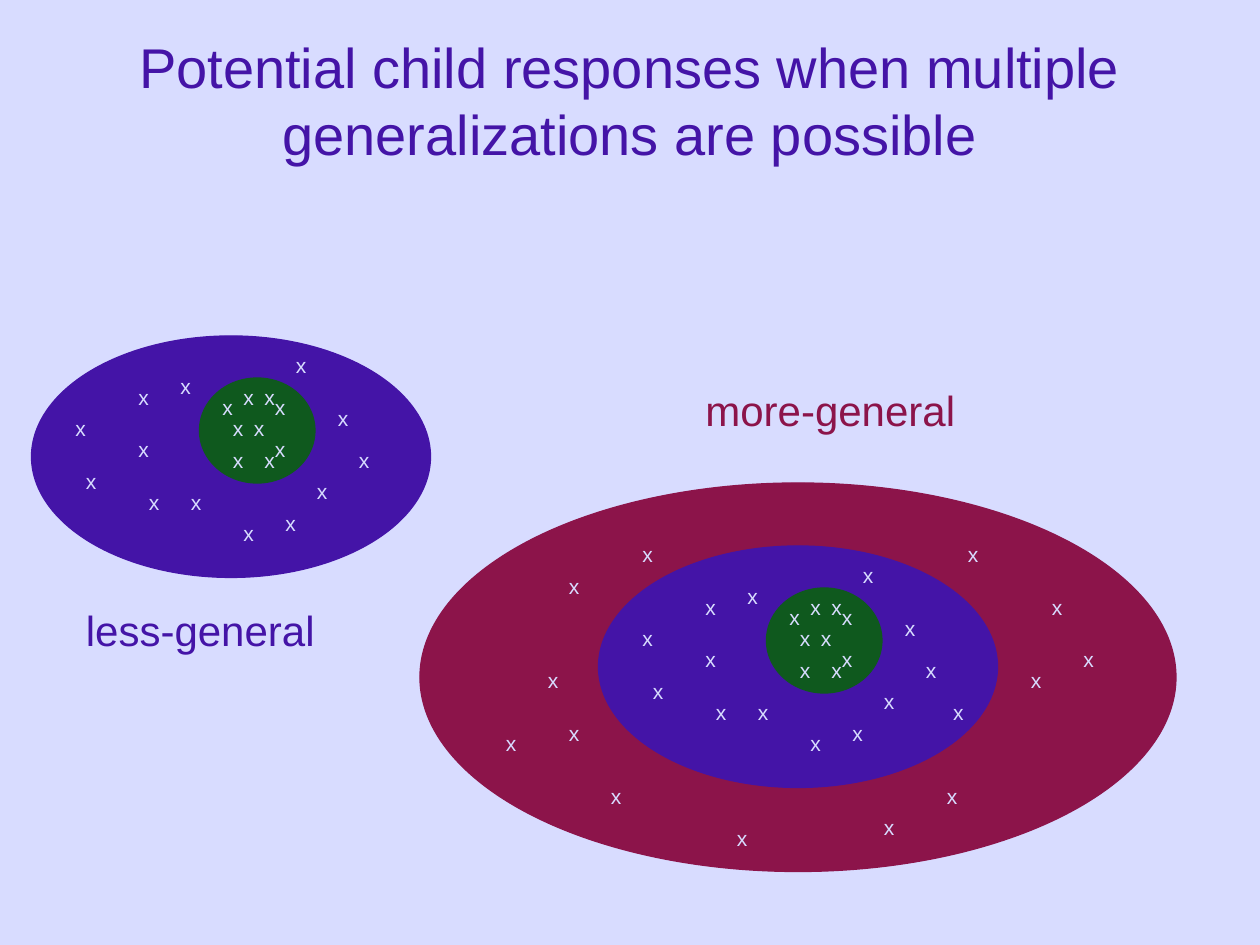
from dataclasses import dataclass

from pptx import Presentation
from pptx import util as u
from pptx.dml.color import RGBColor
from pptx.enum import shapes, text

COLORS = {
    "background": "D8DCFF",
    "specific": "0F591E",
    "less_general": "4414A7",
    "more_general": "8C144A",
}
FONT = "Arial"
COLUMNS, ROWS = 120, 90  # grid cells across and down the slide
MARK_SIZE = (3.4, 3.6)  # columns, rows


@dataclass(frozen=True)
class Region:
    """An ellipse on the grid; marks are offsets from its top left corner."""

    color: str
    column: float
    row: float
    width: float
    height: float
    marks: tuple[tuple[float, float], ...]


@dataclass(frozen=True)
class Label:
    words: str
    color: str
    column: float
    row: float
    width: float
    height: float
    size: int


def nested_regions(column: float, row: float) -> list[Region]:
    """The less-general region with the specific one inside it."""
    return [
        Region("less_general", column, row, 38, 23, (
            (3, 7), (10, 14), (19, 17), (26, 13), (13, 3), (28, 6), (9, 9),
            (23, 16), (24, 1), (30, 10), (14, 14), (9, 4), (4, 12))),
        Region("specific", column + 16, row + 4, 11, 10, (
            (3, 0), (6, 1), (2, 6), (5, 6), (2, 3), (4, 3), (6, 5),
            (1, 1), (5, 0))),
    ]


MORE_GENERAL = Region("more_general", 40, 46, 72, 37, (
    (59, 10), (57, 17), (62, 15), (43, 31), (49.6, 20), (49, 28), (29, 32),
    (17, 28), (11, 17), (7, 23), (13, 8), (13, 22), (51, 5), (20, 5)))

DIAGRAMS = [
    nested_regions(3, 32),
    [MORE_GENERAL, *nested_regions(57, 52)],
]

TITLE = Label("Potential child responses when multiple generalizations are possible",
              "less_general", 9, 2, 102, 15, 32)
LABELS = [
    Label("less-general", "less_general", 7, 57, 24.2, 6, 24),
    Label("more-general", "more_general", 66, 36, 26.2, 6, 24),
]

presentation = Presentation()
presentation.slide_width = u.Inches(10)
presentation.slide_height = u.Inches(7.5)
slide = presentation.slides.add_slide(presentation.slide_layouts[6])


def rgb(name: str) -> RGBColor:
    return RGBColor.from_string(COLORS[name])


def place(column: float, row: float, width: float, height: float) -> tuple[int, ...]:
    """Turn grid cells into slide lengths."""
    cell_width = presentation.slide_width / COLUMNS
    cell_height = presentation.slide_height / ROWS
    return (round(column * cell_width), round(row * cell_height),
            round(width * cell_width), round(height * cell_height))


def draw_ellipse(region: Region) -> None:
    shape = slide.shapes.add_shape(
        shapes.MSO_SHAPE.OVAL,
        *place(region.column, region.row, region.width, region.height))
    shape.shadow.inherit = False
    shape.fill.solid()
    shape.fill.fore_color.rgb = rgb(region.color)
    shape.line.color.rgb = rgb(region.color)
    shape.line.width = u.Pt(0.75)


def draw_label(label: Label, is_title: bool = False) -> None:
    shape = slide.shapes.add_textbox(
        *place(label.column, label.row, label.width, label.height))
    frame = shape.text_frame
    frame.word_wrap = is_title
    paragraph = frame.paragraphs[0]
    if is_title:
        frame.vertical_anchor = text.MSO_ANCHOR.MIDDLE
        paragraph.alignment = text.PP_ALIGN.CENTER
    else:
        frame.auto_size = text.MSO_AUTO_SIZE.SHAPE_TO_FIT_TEXT
    run = paragraph.add_run()
    run.text = label.words
    run.font.name = FONT
    run.font.size = u.Pt(label.size)
    run.font.color.rgb = rgb(label.color)


def draw_marks(region: Region) -> None:
    for column, row in region.marks:
        draw_label(Label("x", "background", region.column + column,
                         region.row + row, *MARK_SIZE, 12))


# Background and title
slide.background.fill.solid()
slide.background.fill.fore_color.rgb = rgb("background")
draw_label(TITLE, is_title=True)

# Ellipses first, so that every mark lies above them
for diagram in DIAGRAMS:
    for region in diagram:
        draw_ellipse(region)
    for region in diagram:
        draw_marks(region)

# Captions
for label in LABELS:
    draw_label(label)

presentation.save("out.pptx")
